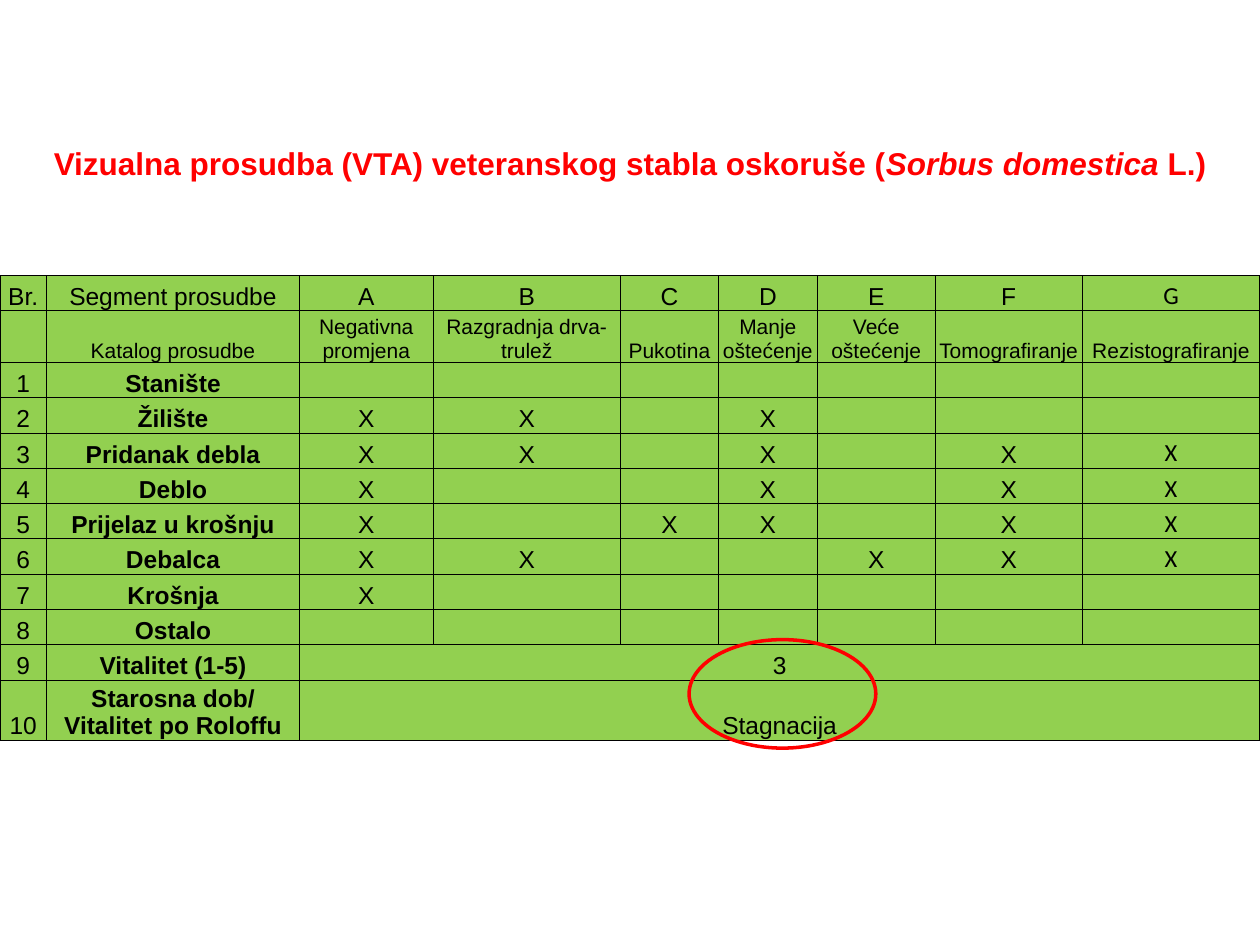
from dataclasses import dataclass

from lxml.etree import SubElement
from pptx import Presentation
from pptx.dml.color import RGBColor
from pptx.enum.shapes import MSO_SHAPE
from pptx.enum.text import MSO_ANCHOR, MSO_AUTO_SIZE, PP_ALIGN
from pptx.oxml.ns import qn
from pptx.slide import Slide
from pptx.table import Table, _Cell
from pptx.util import Pt

RED = RGBColor(0xFF, 0x00, 0x00)
GREEN = RGBColor(0x92, 0xD0, 0x50)
BLACK = RGBColor(0x00, 0x00, 0x00)

COLUMN_WIDTHS = (26.6, 144.6, 76.3, 107.1, 56, 56.5, 67.4, 84, 101.5)
ROW_HEIGHT = 20.16
BODY_SIZE = 14
CATALOGUE_SIZE = 12
CATALOGUE_ROW = 1
FIRST_SEGMENT_ROW = 2
SEGMENT_COLUMN = 1
FIRST_MARK_COLUMN = 2
LETTERS = "ABCDEFG"

CATALOGUE = (
    "Katalog prosudbe",
    "Negativna promjena",
    "Razgradnja drva-trulež",
    "Pukotina",
    "Manje oštećenje",
    "Veće oštećenje",
    "Tomografiranje",
    "Rezistografiranje",
)


@dataclass(frozen=True)
class Segment:
    """An assessed part of the tree: marked letters, or one merged result."""

    name: str
    marks: str = ""
    result: str = ""

    def values(self) -> list[str]:
        if self.result:
            return [self.result] + [""] * (len(LETTERS) - 1)
        return ["X" if letter in self.marks else "" for letter in LETTERS]


SEGMENTS = (
    Segment("Stanište"),
    Segment("Žilište", "ABD"),
    Segment("Pridanak debla", "ABDFG"),
    Segment("Deblo", "ADFG"),
    Segment("Prijelaz u krošnju", "ACDFG"),
    Segment("Debalca", "ABEFG"),
    Segment("Krošnja", "A"),
    Segment("Ostalo"),
    Segment("Vitalitet (1-5)", result="3"),
    Segment("Starosna dob/\nVitalitet po Roloffu", result="Stagnacija"),
)


def add_title(slide: Slide) -> None:
    box = slide.shapes.add_textbox(Pt(0), Pt(78.5), Pt(720), Pt(29))
    frame = box.text_frame
    frame.word_wrap = True
    frame.auto_size = MSO_AUTO_SIZE.SHAPE_TO_FIT_TEXT
    paragraph = frame.paragraphs[0]
    paragraph.alignment = PP_ALIGN.CENTER
    for text, italic in (
        ("Vizualna prosudba (VTA) veteranskog stabla oskoruše (", False),
        ("Sorbus domestica ", True),
        ("L.)", False),
    ):
        run = paragraph.add_run()
        run.text = text
        run.font.name = "Arial"
        run.font.size = Pt(18)
        run.font.bold = True
        run.font.italic = italic
        run.font.color.rgb = RED


def add_borders(cell: _Cell) -> None:
    """Draw thin black lines on all sides; call before filling the cell."""
    properties = cell._tc.get_or_add_tcPr()
    for side in ("a:lnL", "a:lnR", "a:lnT", "a:lnB"):
        line = SubElement(properties, qn(side), w=str(Pt(0.5)))
        fill = SubElement(line, qn("a:solidFill"))
        SubElement(fill, qn("a:srgbClr"), val=str(BLACK))


def format_cell(cell: _Cell, text: str, size: float, font_name: str, bold: bool) -> None:
    add_borders(cell)
    cell.fill.solid()
    cell.fill.fore_color.rgb = GREEN
    cell.margin_left = cell.margin_right = cell.margin_top = Pt(0.7)
    cell.margin_bottom = Pt(0)
    cell.vertical_anchor = MSO_ANCHOR.BOTTOM
    cell.text_frame.text = text
    for paragraph in cell.text_frame.paragraphs:
        paragraph.alignment = PP_ALIGN.CENTER
        for run in paragraph.runs:
            run.font.name = font_name
            run.font.size = Pt(size)
            run.font.bold = bold
            run.font.color.rgb = BLACK
        if not paragraph.runs:
            # Keeps an empty cell from growing to the default text size
            paragraph._p.get_or_add_endParaRPr().set("sz", str(size * 100))


def fill_row(table: Table, row: int, texts: list[str]) -> None:
    size = CATALOGUE_SIZE if row == CATALOGUE_ROW else BODY_SIZE
    last_column = len(COLUMN_WIDTHS) - 1
    for column, text in enumerate(texts):
        calibri = column == last_column and row != CATALOGUE_ROW
        bold = column == SEGMENT_COLUMN and row >= FIRST_SEGMENT_ROW
        font_name = "Calibri" if calibri else "Arial"
        format_cell(table.cell(row, column), text, size, font_name, bold)


def add_assessment_table(slide: Slide) -> None:
    rows = [["Br.", "Segment prosudbe", *LETTERS], ["", *CATALOGUE]]
    for number, segment in enumerate(SEGMENTS, start=1):
        rows.append([str(number), segment.name, *segment.values()])
    frame = slide.shapes.add_table(
        len(rows), len(COLUMN_WIDTHS), Pt(0), Pt(157.5), Pt(720), Pt(ROW_HEIGHT * len(rows))
    )
    table = frame.table
    table.first_row = False
    table.horz_banding = False
    for column, width in zip(table.columns, COLUMN_WIDTHS):
        column.width = Pt(width)
    for index, texts in enumerate(rows):
        table.rows[index].height = Pt(ROW_HEIGHT)
        fill_row(table, index, texts)
    for index, segment in enumerate(SEGMENTS, start=FIRST_SEGMENT_ROW):
        if segment.result:
            last_cell = table.cell(index, len(COLUMN_WIDTHS) - 1)
            table.cell(index, FIRST_MARK_COLUMN).merge(last_cell)


def add_result_ring(slide: Slide) -> None:
    ring = slide.shapes.add_shape(MSO_SHAPE.OVAL, Pt(393.8), Pt(365.5), Pt(106.7), Pt(62))
    ring.shadow.inherit = False
    ring.fill.background()
    ring.line.color.rgb = RED
    ring.line.width = Pt(2)


def main() -> None:
    presentation = Presentation()
    presentation.slide_width = Pt(720)
    presentation.slide_height = Pt(540)
    slide = presentation.slides.add_slide(presentation.slide_layouts[6])
    add_title(slide)
    add_assessment_table(slide)
    add_result_ring(slide)
    presentation.save("out.pptx")


if __name__ == "__main__":
    main()
